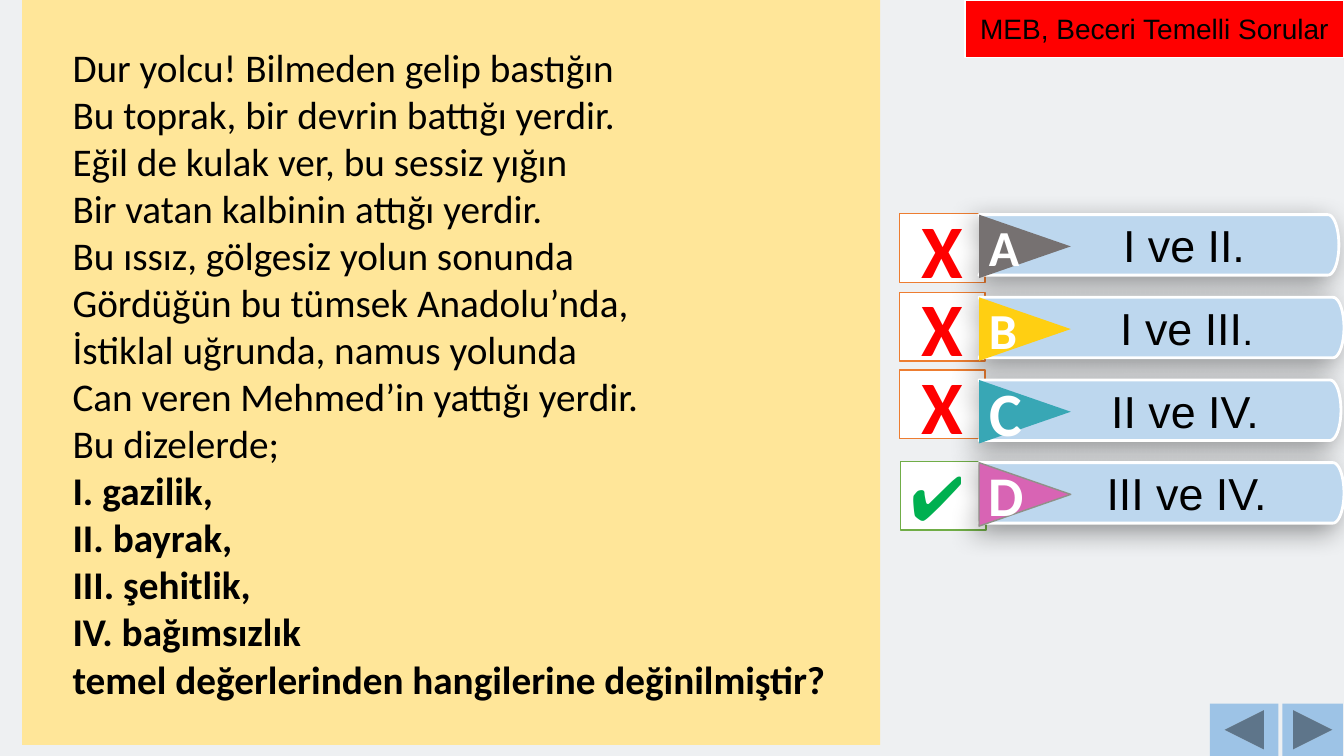
from math import cos, pi, sin

from lxml import etree
from pptx import Presentation
from pptx.dml.color import RGBColor
from pptx.enum.shapes import MSO_SHAPE as Shape
from pptx.enum.text import MSO_ANCHOR as Anchor, MSO_AUTO_SIZE as AutoSize, PP_ALIGN as Align
from pptx.oxml import parse_xml
from pptx.oxml.ns import nsdecls, qn
from pptx.util import Inches, Pt

# Content
HEADING = "MEB, Beceri Temelli Sorular"
POEM = [
    "Dur yolcu! Bilmeden gelip bastığın",
    "Bu toprak, bir devrin battığı yerdir.",
    "Eğil de kulak ver, bu sessiz yığın",
    "Bir vatan kalbinin attığı yerdir.",
    "Bu ıssız, gölgesiz yolun sonunda",
    "Gördüğün bu tümsek Anadolu’nda,",
    "İstiklal uğrunda, namus yolunda",
    "Can veren Mehmed’in yattığı yerdir.",
    "Bu dizelerde;",
]
QUESTION = [
    "I. gazilik,",
    "II. bayrak,",
    "III. şehitlik,",
    "IV. bağımsızlık",
    "temel değerlerinden hangilerine değinilmiştir?",
]
# letter, letter size, letter alignment, triangle colour, triangle line,
# answer runs with sizes, right edge of the bar
OPTIONS = [
    ("A", 36, Align.CENTER, "grey", None, [("I ve II.", 32)], 13.28),
    ("B", 36, Align.CENTER, "yellow", None, [("I ve III", 32), (".", 28)], 13.33),
    ("C", 44, Align.LEFT, "teal", None, [("II ve IV.", 32)], 13.30),
    ("D", 40, Align.CENTER, "pink", "outline", [("III ve IV.", 32)], 13.33),
]
# symbol, size, bold, alignment, text colour, line colour, left, top
MARKS = [
    ("X", 54, True, Align.CENTER, "red", "orange", 8.92, 2.12),
    ("X", 54, True, Align.CENTER, "red", "orange", 8.92, 2.90),
    ("X", 54, True, Align.CENTER, "red", "orange", 8.92, 3.67),
    ("✔", 44, False, Align.LEFT, "check", "green", 8.93, 4.58),
]
BUTTONS = [
    (Shape.ACTION_BUTTON_BACK_OR_PREVIOUS, 12, 0.68),
    (Shape.ACTION_BUTTON_FORWARD_OR_NEXT, 12.72, 0.6),
]
COLOURS = {
    "background": "EEF0F2", "panel": "FFE699", "button": "9DC3E6", "bar": "BDD7EE",
    "white": "FFFFFF", "black": "000000", "red": "FF0000", "check": "00B050",
    "green": "70AD47", "orange": "ED7D31", "grey": "767171", "yellow": "FFCF12",
    "teal": "38A7B5", "pink": "D864B4", "outline": "909189",
}
BAR_LEFT, BAR_TOP, BAR_HEIGHT, BAR_STEP = 9.71, 2.13, 0.6, 0.82
NOTCH, CAP, CAP_STEPS = 0.18, 0.11, 24


def colour(name):
    return RGBColor.from_string(COLOURS[name])


def place(shape, left, top, width, height):
    shape.left, shape.top = Inches(left), Inches(top)
    shape.width, shape.height = Inches(width), Inches(height)


def paint(shape, fill, line=None, line_width=1):
    shape.fill.solid()
    shape.fill.fore_color.rgb = colour(fill)
    if line:
        shape.line.color.rgb = colour(line)
        shape.line.width = Pt(line_width)
    else:
        shape.line.fill.background()


def add_shape(kind, left, top, width, height, fill, line=None):
    shape = slide.shapes.add_shape(
        kind, Inches(left), Inches(top), Inches(width), Inches(height))
    shape.shadow.inherit = False
    paint(shape, fill, line)
    return shape


def set_frame(shape, inset=None):
    frame = shape.text_frame
    frame.word_wrap = True
    frame.auto_size = AutoSize.NONE
    frame.vertical_anchor = Anchor.MIDDLE
    if inset is not None:
        frame.margin_left = frame.margin_right = Inches(inset)
        frame.margin_top = frame.margin_bottom = Inches(inset)
    return frame


def write(paragraph, runs, font, text_colour, align, bold=False, indent=None):
    paragraph.alignment = align
    paragraph.space_before = Pt(0)
    if indent is not None:
        properties = paragraph._p.get_or_add_pPr()
        properties.set("marL", str(Inches(indent)))
        properties.set("indent", "0")
        etree.SubElement(properties, qn("a:buNone"))
    for text, size in runs:
        run = paragraph.add_run()
        run.text = text
        run.font.name, run.font.size, run.font.bold = font, Pt(size), bold
        run.font.color.rgb = colour(text_colour)


def add_bar(top, right):
    middle, radius = top + BAR_HEIGHT / 2, BAR_HEIGHT / 2
    angles = [pi * (step / CAP_STEPS - 0.5) for step in range(CAP_STEPS + 1)]
    cap = [(right - CAP + CAP * cos(a), middle + radius * sin(a)) for a in angles]
    points = cap + [(BAR_LEFT, top + BAR_HEIGHT), (BAR_LEFT + NOTCH, middle)]
    builder = slide.shapes.build_freeform(Inches(BAR_LEFT), Inches(top))
    builder.add_line_segments([(Inches(x), Inches(y)) for x, y in points], close=True)
    bar = builder.convert_to_shape()
    paint(bar, "bar", "white", 2)
    bar._element.spPr.append(parse_xml(
        f'<a:effectLst {nsdecls("a")}>'
        f'<a:outerShdw blurRad="{Pt(20)}" dist="{Pt(7)}" dir="{135 * 60000}" rotWithShape="0">'
        f'<a:srgbClr val="{COLOURS["black"]}"><a:alpha val="40000"/></a:srgbClr>'
        '</a:outerShdw></a:effectLst>'))
    return bar


presentation = Presentation()
presentation.slide_width, presentation.slide_height = Inches(13.33), Inches(7.5)
slide = presentation.slides.add_slide(presentation.slide_layouts[1])
slide.background.fill.solid()
slide.background.fill.fore_color.rgb = colour("background")

# Heading label
heading, panel = slide.shapes.title, slide.placeholders[1]
place(heading, 9.57, 0, 3.76, 0.57)
heading._element.spPr.append(parse_xml(
    f'<a:prstGeom {nsdecls("a")} prst="roundRect"><a:avLst/></a:prstGeom>'))
paint(heading, "red", "white")
write(set_frame(heading, 0).paragraphs[0], [(HEADING, 20)], "Arial", "black", Align.CENTER)

# Poem and question
place(panel, 0.22, 0, 8.51, 7.39)
paint(panel, "panel")
frame = set_frame(panel, 0)
for number, line in enumerate(POEM + QUESTION):
    paragraph = frame.add_paragraph() if number else frame.paragraphs[0]
    write(paragraph, [(line, 28)], "Calibri", "black", Align.JUSTIFY,
          bold=number >= len(POEM), indent=0.5)

# Navigation buttons
for kind, left, width in BUTTONS:
    add_shape(kind, left, 6.98, width, 0.52, "button")

# Right and wrong marks
for symbol, size, bold, align, text_colour, line, left, top in MARKS:
    mark = add_shape(Shape.RECTANGLE, left, top, 0.85, 0.68, "white", line)
    write(set_frame(mark).paragraphs[0], [(symbol, size)], "Calibri", text_colour, align, bold)

# Answer bars with lettered triangles
for row, (letter, size, align, fill, line, answer, right) in enumerate(OPTIONS):
    top = BAR_TOP + row * BAR_STEP
    bar = add_bar(top, right)
    write(set_frame(bar).paragraphs[0], answer, "Arial", "black", Align.CENTER, indent=0.5)
    triangle = add_shape(Shape.ISOSCELES_TRIANGLE, 9.85, top - 0.14, 0.63, 0.91, fill, line)
    triangle.rotation = 90
    frame = set_frame(triangle)
    frame._txBody.bodyPr.set("vert", "vert270")
    write(frame.paragraphs[0], [(letter, size)], "Calibri", "white", align, bold=True)

presentation.save("out.pptx")
